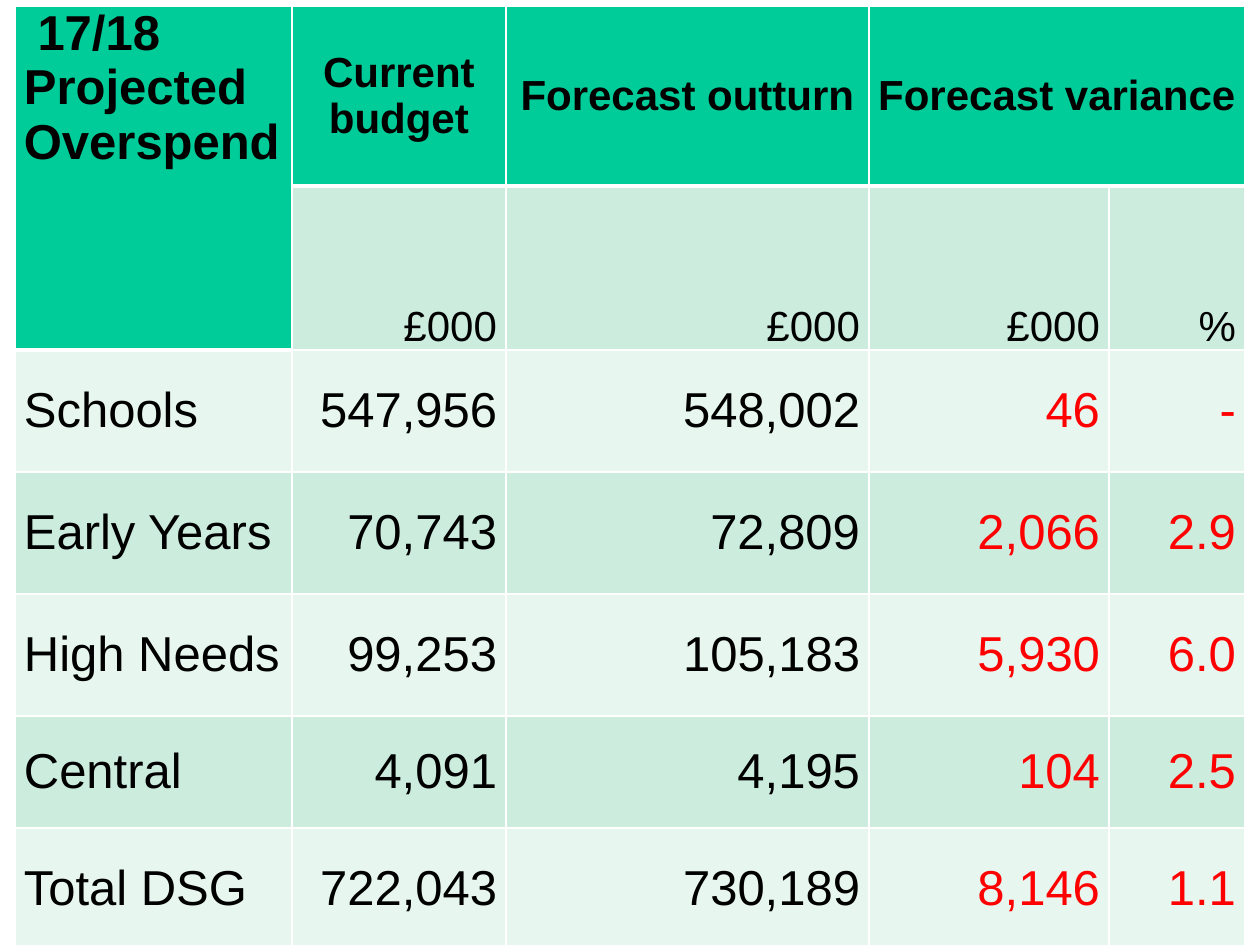
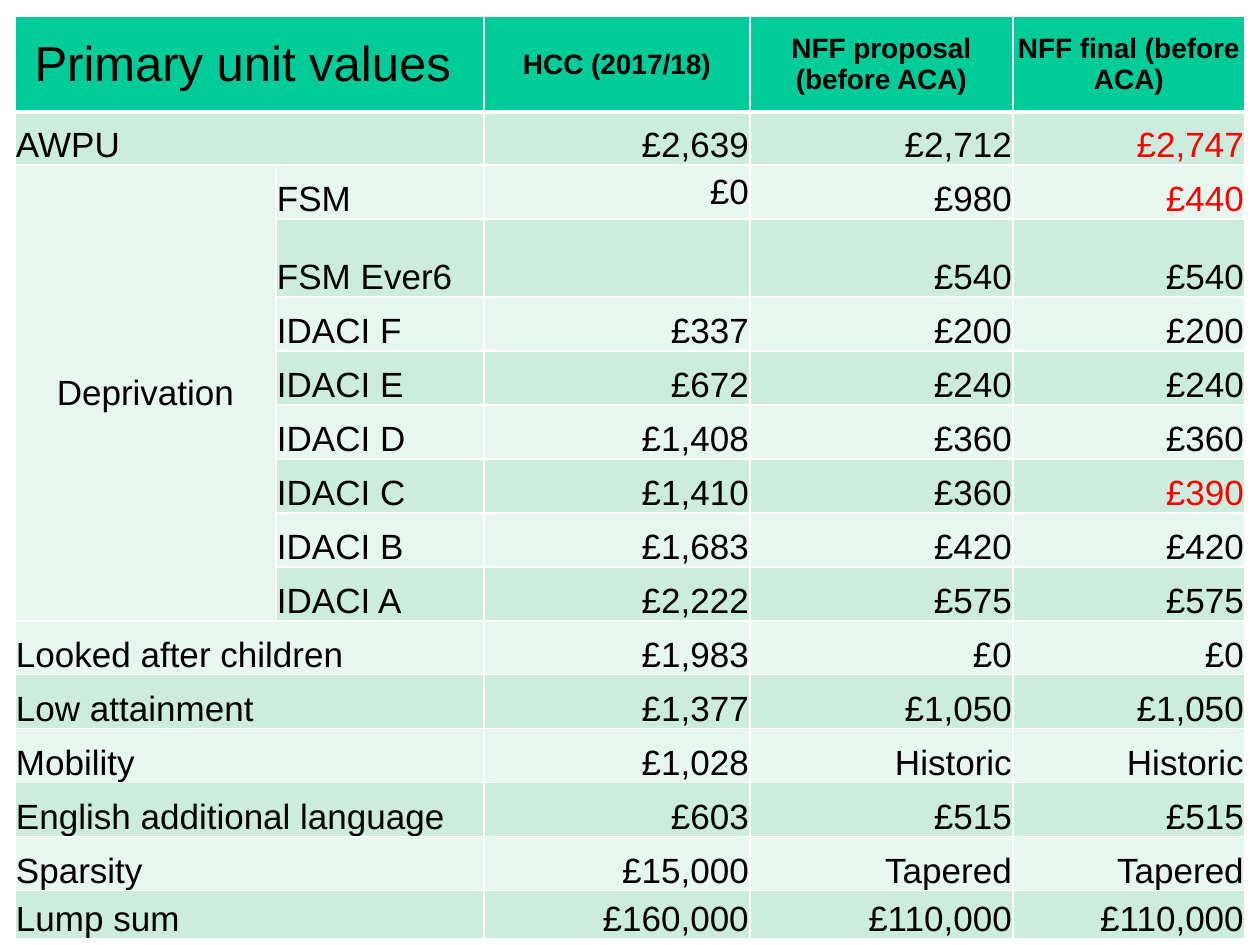
"""Build two school funding table slides: projected overspend and primary unit values."""
from lxml import etree
from pptx import Presentation
from pptx import util as u
from pptx.dml.color import RGBColor
from pptx.enum import text
from pptx.oxml.ns import qn

PX = 914400 // 126
FONT = "Arial"
COLORS = {"head": "00CC99", "odd": "CCECDE", "even": "E7F6EF",
          "line": "FFFFFF", "text": "000000", "alert": "FF0000"}
LEFT, CENTER, RIGHT = text.PP_ALIGN.LEFT, text.PP_ALIGN.CENTER, text.PP_ALIGN.RIGHT
TOP, MIDDLE, BOTTOM = text.MSO_ANCHOR.TOP, text.MSO_ANCHOR.MIDDLE, text.MSO_ANCHOR.BOTTOM

overspend = {
    "top": 6,
    "cols": [277, 214, 363, 240, 136],
    "rows": [180, 93, 122, 122, 122, 112, 122],
    "insets": {"margin_left": 9, "margin_right": 9, "margin_top": 0, "margin_bottom": 0},
    "space_after": 6,
    "label_cols": 1,
    "head_size": 24,
    "body": {"size": 28, "anchor": MIDDLE},
    "merges": [(0, 0, 1, 0), (0, 3, 0, 4)],
    "head_cells": {(1, 0)},
    "alerts": {(r, c) for r in range(2, 7) for c in (3, 4)},
    "special": {(0, 0): {"size": 28, "align": LEFT, "anchor": TOP},
                **{(1, c): {"size": 24, "anchor": BOTTOM} for c in range(1, 5)}},
    "data": [
        [" 17/18 Projected Overspend", "Current budget", "Forecast outturn", "Forecast variance", ""],
        ["", "£000", "£000", "£000", "%"],
        ["Schools", "547,956", "548,002", "46", "-"],
        ["Early Years", "70,743", "72,809", "2,066", "2.9"],
        ["High Needs", "99,253", "105,183", "5,930", "6.0"],
        ["Central", "4,091", "4,195", "104", "2.5"],
        ["Total DSG", "722,043", "730,189", "8,146", "1.1"],
    ],
}

unit_values = {
    "top": 16,
    "cols": [261, 208, 266, 263, 232],
    "rows": [96, 53, 54, 78] + [54] * 11 + [48],
    "insets": {"margin_left": 1, "margin_right": 1, "margin_top": 1, "margin_bottom": 0},
    "space_after": 0,
    "label_cols": 2,
    "head_size": 16,
    "body": {"size": 20, "anchor": BOTTOM},
    "merges": [(r, 0, r, 1) for r in (0, 1, *range(10, 16))] + [(2, 0, 9, 0)],
    "head_cells": set(),
    "alerts": {(1, 4), (2, 4), (7, 4)},
    "special": {(0, 0): {"size": 28, "bold": False},
                (2, 0): {"align": CENTER, "anchor": MIDDLE},
                (2, 2): {"anchor": MIDDLE}},
    "data": [
        ["Primary unit values ", "", "HCC (2017/18)", "NFF proposal (before ACA)", "NFF final (before ACA)"],
        ["AWPU", "", "£2,639", "£2,712", "£2,747"],
        ["Deprivation", "FSM", "£0", "£980", "£440"],
        ["", "FSM Ever6", "", "£540", "£540"],
        ["", "IDACI F", "£337", "£200", "£200"],
        ["", "IDACI E", "£672", "£240", "£240"],
        ["", "IDACI D", "£1,408", "£360", "£360"],
        ["", "IDACI C", "£1,410", "£360", "£390"],
        ["", "IDACI B", "£1,683", "£420", "£420"],
        ["", "IDACI A", "£2,222", "£575", "£575"],
        ["Looked after children", "", "£1,983", "£0", "£0"],
        ["Low attainment", "", "£1,377", "£1,050", "£1,050"],
        ["Mobility", "", "£1,028", "Historic", "Historic"],
        ["English additional language", "", "£603", "£515", "£515"],
        ["Sparsity", "", "£15,000", "Tapered", "Tapered"],
        ["Lump sum", "", "£160,000", "£110,000", "£110,000"],
    ],
}


def add_borders(cell, widths):
    """Draw the cell's edges, given as side to width in points."""
    tc_pr = cell._tc.get_or_add_tcPr()
    for side, width in widths.items():
        ln = etree.SubElement(tc_pr, qn("a:ln" + side), w=str(u.Pt(width)))
        fill = etree.SubElement(ln, qn("a:solidFill"))
        etree.SubElement(fill, qn("a:srgbClr"), val=COLORS["line"])


prs = Presentation()
prs.slide_width, prs.slide_height = 1260 * PX, 945 * PX

for spec_table in (overspend, unit_values):
    s = prs.slides.add_slide(prs.slide_layouts[6])
    cols, rows = spec_table["cols"], spec_table["rows"]
    sp = s.shapes.add_table(len(rows), len(cols), 15 * PX, spec_table["top"] * PX,
                            sum(cols) * PX, sum(rows) * PX)
    tbl = sp.table
    tbl.first_row = tbl.horz_banding = False
    for col, width in zip(tbl.columns, cols):
        col.width = width * PX
    for row, height in zip(tbl.rows, rows):
        row.height = height * PX

    heads = {(0, c) for c in range(len(cols))} | spec_table["head_cells"]
    for r, values in enumerate(spec_table["data"]):
        for c, value in enumerate(values):
            cell = tbl.cell(r, c)
            is_head = (r, c) in heads
            under_head = (r - 1, c) in heads and not is_head
            add_borders(cell, {"L": 1, "R": 1, "T": 3 if under_head else 1,
                               "B": 3 if is_head else 1})
            band = "head" if is_head else "odd" if r % 2 else "even"
            cell.fill.solid()
            cell.fill.fore_color.rgb = RGBColor.from_string(COLORS[band])
            for name, inset in spec_table["insets"].items():
                setattr(cell, name, inset * PX)

            if is_head:
                fmt = {"size": spec_table["head_size"], "bold": True,
                       "align": CENTER, "anchor": MIDDLE}
            else:
                align = LEFT if c < spec_table["label_cols"] else RIGHT
                fmt = {"bold": False, "align": align, **spec_table["body"]}
            fmt.update(spec_table["special"].get((r, c), {}))
            cell.vertical_anchor = fmt["anchor"]
            if not value:
                continue
            p = cell.text_frame.paragraphs[0]
            p.alignment = fmt["align"]
            p.space_after = u.Pt(spec_table["space_after"])
            run = p.add_run()
            run.text = value
            for name, setting in {"name": FONT, "size": u.Pt(fmt["size"]),
                                  "bold": fmt["bold"]}.items():
                setattr(run.font, name, setting)
            ink = "alert" if (r, c) in spec_table["alerts"] else "text"
            run.font.color.rgb = RGBColor.from_string(COLORS[ink])

    for top, left, bottom, right in spec_table["merges"]:
        tbl.cell(top, left).merge(tbl.cell(bottom, right))

prs.save("out.pptx")
